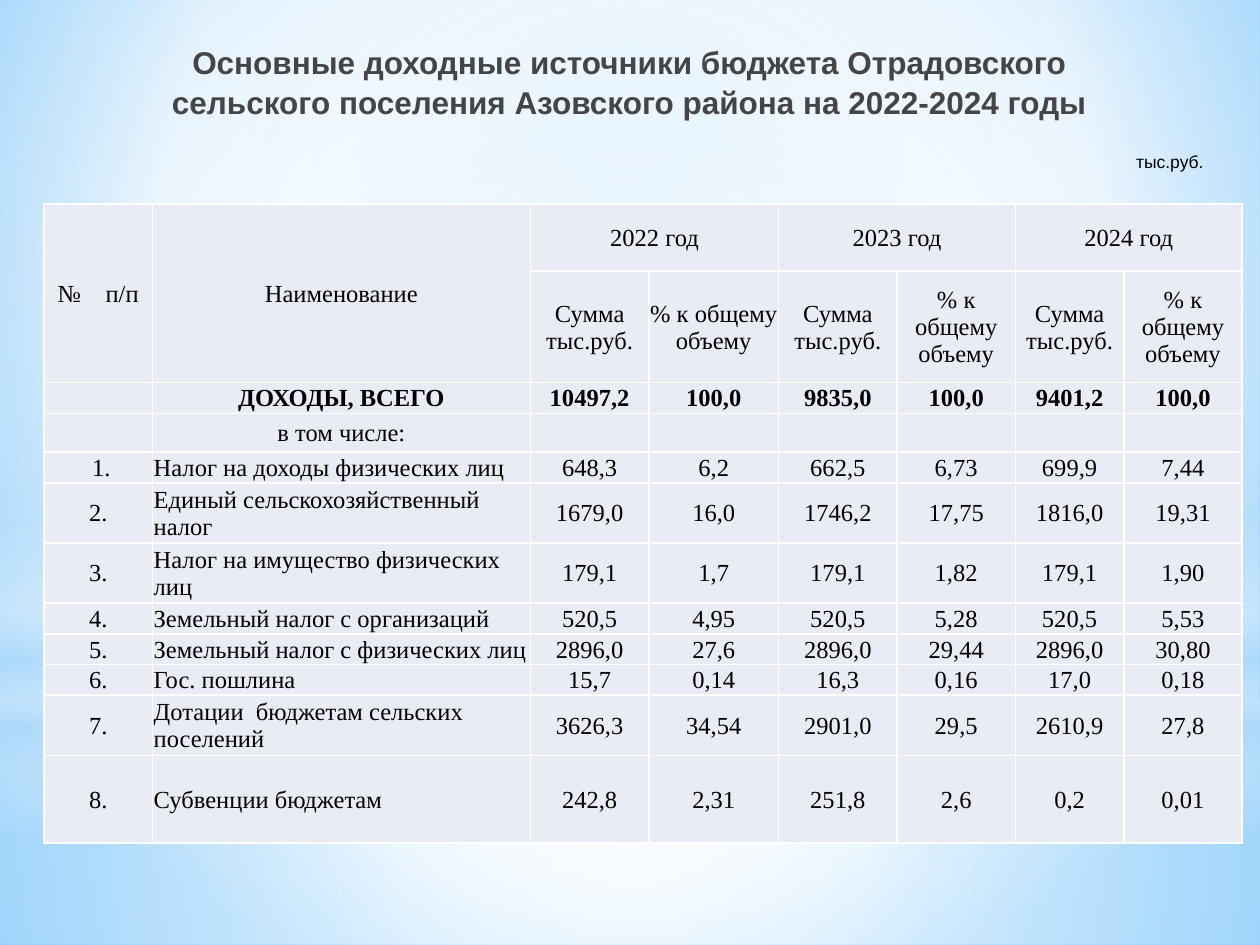
from dataclasses import dataclass

from lxml import etree
from pptx import Presentation
from pptx.dml.color import RGBColor
from pptx.enum.shapes import MSO_SHAPE
from pptx.enum.text import MSO_ANCHOR, MSO_AUTO_SIZE, PP_ALIGN
from pptx.oxml.ns import qn
from pptx.util import Inches, Pt

RECT, OVAL = MSO_SHAPE.RECTANGLE, MSO_SHAPE.OVAL
LEFT, CENTER, RIGHT = PP_ALIGN.LEFT, PP_ALIGN.CENTER, PP_ALIGN.RIGHT
TOP, MIDDLE = MSO_ANCHOR.TOP, MSO_ANCHOR.MIDDLE
NO_AUTOFIT = MSO_AUTO_SIZE.NONE


@dataclass(frozen=True)
class Theme:
    sans: str = "Arial"
    serif: str = "Times New Roman"
    title_size: int = 18
    unit_size: int = 10
    table_size: int = 14
    title: str = "454545"
    text: str = "000000"
    cell: str = "E9EBF5"
    white: str = "FFFFFF"
    pale: str = "B4DCFA"
    sky: str = "9ED5FF"
    blue: str = "5BB9FF"


theme = Theme()


def set_gradient(parent, stops, focus=None):
    """Swap the solid fill in parent for a gradient: round if focus (l, t, r, b) is given, else vertical."""
    grad = etree.Element(qn("a:gradFill"), rotWithShape="1")
    gs_list = etree.SubElement(grad, qn("a:gsLst"))
    for pos, color, alpha in stops:
        gs = etree.SubElement(gs_list, qn("a:gs"), pos=str(pos * 1000))
        clr = etree.SubElement(gs, qn("a:srgbClr"), val=color)
        if alpha < 100:
            etree.SubElement(clr, qn("a:alpha"), val=str(alpha * 1000))
    if focus:
        shade = etree.SubElement(grad, qn("a:path"))
        shade.set("path", "circle")
        sides = {side: str(share * 1000) for side, share in zip("ltrb", focus)}
        etree.SubElement(shade, qn("a:fillToRect"), sides)
    else:
        etree.SubElement(grad, qn("a:lin"), ang="5400000", scaled="0")
    parent.replace(parent.find(qn("a:solidFill")), grad)


def format_text(tf, size, font, color, align, bold=False):
    for p in tf.paragraphs:
        p.alignment = align
        for r in p.runs:
            r.font.size, r.font.name, r.font.bold = Pt(size), font, bold
            r.font.color.rgb = RGBColor.from_string(color)


prs = Presentation()
prs.slide_width, prs.slide_height = Inches(10), Inches(7.5)
col, row = prs.slide_width / 100, prs.slide_height / 100  # one percent of the slide
s = prs.slides.add_slide(prs.slide_layouts[5])

# Background and its soft overlays
s.background.fill.solid()
set_gradient(s.element.find(".//" + qn("p:bgPr")),
             [(0, theme.sky, 100), (60, theme.white, 100), (100, theme.blue, 100)],
             (20, 10, 20, 60))

center = (50, 50, 50, 50)
overlays = [  # shape, top and height in rows, stops, focus
    (RECT, 74.4, 25.6, [(0, theme.white, 91), (37, theme.white, 76), (100, theme.pale, 79)], center),
    (RECT, 0, 74.4, [(0, theme.white, 89), (48, theme.white, 62), (100, theme.pale, 79)], center),
    (RECT, 55, 33.3, [(0, theme.white, 0), (29, theme.white, 30), (45, theme.pale, 40),
                      (55, theme.white, 26), (65, theme.pale, 60), (100, theme.white, 0)], None),
    (OVAL, 23.3, 74.4, [(0, theme.white, 100), (56, theme.white, 0)], center),
]
for kind, top, height, stops, focus in overlays:
    sp = s.shapes.add_shape(kind, 0, int(top * row), prs.slide_width, int(height * row))
    sp.shadow.inherit = False
    sp.line.fill.background()
    sp.fill.solid()
    set_gradient(sp.element.spPr, stops, focus)

# Title, lifted above the overlays
title = s.shapes.title
s.shapes.element.append(title.element)
title.left, title.top = int(12.1 * col), int(3.7 * row)
title.width, title.height = int(75.7 * col), int(16.7 * row)
tf = title.text_frame
tf.text = ("Основные доходные источники бюджета Отрадовского "
           "сельского поселения Азовского района на 2022-2024 годы")
tf.word_wrap, tf.auto_size, tf.vertical_anchor = True, NO_AUTOFIT, TOP
tf.paragraphs[0].line_spacing = 1.05
format_text(tf, theme.title_size, theme.sans, theme.title, CENTER, bold=True)

# Unit of measure
unit = s.shapes.add_textbox(int(79.2 * col), int(15.3 * row), int(17.3 * col), int(3.6 * row))
tf = unit.text_frame
tf.word_wrap = True
tf.text = "тыс.руб."
format_text(tf, theme.unit_size, theme.sans, theme.text, RIGHT)

# Income table
years = ["2022 год", "2023 год", "2024 год"]
rows = [
    ["№    п/п", "Наименование"] + [text for year in years for text in (year, "")],
    ["", ""] + ["Сумма тыс.руб.", "% к общему объему"] * len(years),
    ["", "ДОХОДЫ, ВСЕГО", "10497,2", "100,0", "9835,0", "100,0", "9401,2", "100,0"],
    ["", "в том числе:"] + [""] * 6,
    [" 1.", "Налог на доходы физических лиц", "648,3", "6,2", "662,5", "6,73", "699,9", "7,44"],
    ["2.", "Единый сельскохозяйственный налог", "1679,0", "16,0", "1746,2", "17,75", "1816,0", "19,31"],
    ["3.", "Налог на имущество физических лиц", "179,1", "1,7", "179,1", "1,82", "179,1", "1,90"],
    ["4.", "Земельный налог с организаций", "520,5", "4,95", "520,5", "5,28", "520,5", "5,53"],
    ["5.", "Земельный налог с физических лиц", "2896,0", "27,6", "2896,0", "29,44", "2896,0", "30,80"],
    ["6.", "Гос. пошлина", "15,7", "0,14", "16,3", "0,16", "17,0", "0,18"],
    ["7.", "Дотации  бюджетам сельских поселений", "3626,3", "34,54", "2901,0", "29,5", "2610,9", "27,8"],
    ["8.", "Субвенции бюджетам", "242,8", "2,31", "251,8", "2,6", "0,2", "0,01"],
]
total_row, first_item_row, name_col = 2, 4, 1
widths = [8.6, 30, 9.4, 10.3, 9.4, 9.4, 8.6, 9.4]
heights = [7.1, 11.8, 3.2, 4.1, 3.2, 3.2, 4.1, 3.2, 3.2, 3.2, 3.9, 9.3]

table = s.shapes.add_table(len(rows), len(widths), int(3.5 * col), int(21.6 * row),
                           int(sum(widths) * col), int(sum(heights) * row)).table
table.first_row = table.horz_banding = False
for column, width in zip(table.columns, widths):
    column.width = int(width * col)
for line, height in zip(table.rows, heights):
    line.height = int(height * row)

for i, texts in enumerate(rows):
    for j, text in enumerate(texts):
        cell = table.cell(i, j)
        cell.margin_left = cell.margin_right = cell.margin_top = Inches(0.01)
        cell.margin_bottom = 0
        cell.vertical_anchor = MIDDLE
        for side in ("a:lnL", "a:lnR", "a:lnT", "a:lnB"):
            ln = etree.SubElement(cell._tc.tcPr, qn(side), w=str(Pt(1)))
            fill = etree.SubElement(ln, qn("a:solidFill"))
            etree.SubElement(fill, qn("a:srgbClr"), val=theme.white)
        cell.fill.solid()
        cell.fill.fore_color.rgb = RGBColor.from_string(theme.cell)
        if text:
            cell.text_frame.text = text
            align = LEFT if j == name_col and i >= first_item_row else CENTER
            format_text(cell.text_frame, theme.table_size, theme.serif, theme.text,
                        align, bold=i == total_row)
        else:  # keeps an empty cell from stretching its row
            etree.SubElement(cell.text_frame.paragraphs[0]._p, qn("a:endParaRPr"),
                             sz=str(theme.table_size * 100))

for j in (0, name_col):
    table.cell(0, j).merge(table.cell(1, j))
for j in range(2, len(widths), 2):
    table.cell(0, j).merge(table.cell(0, j + 1))

prs.save("out.pptx")
